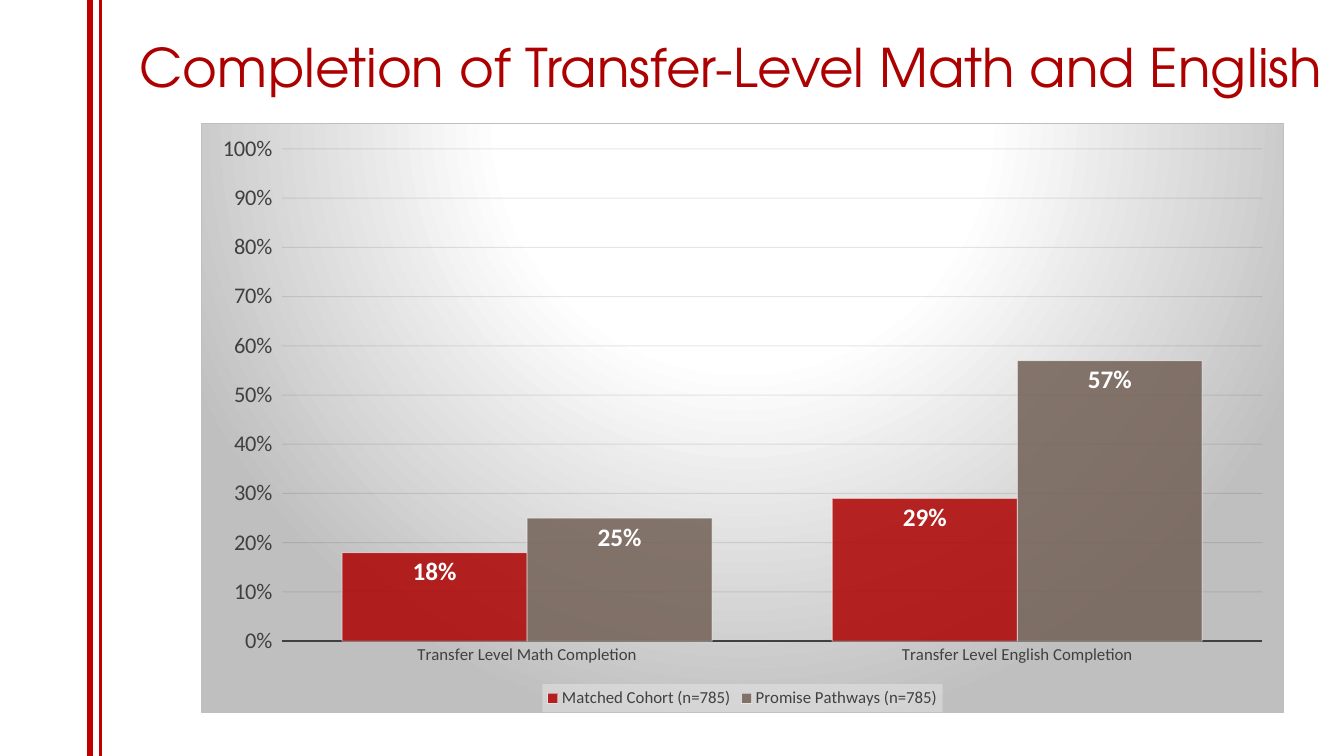
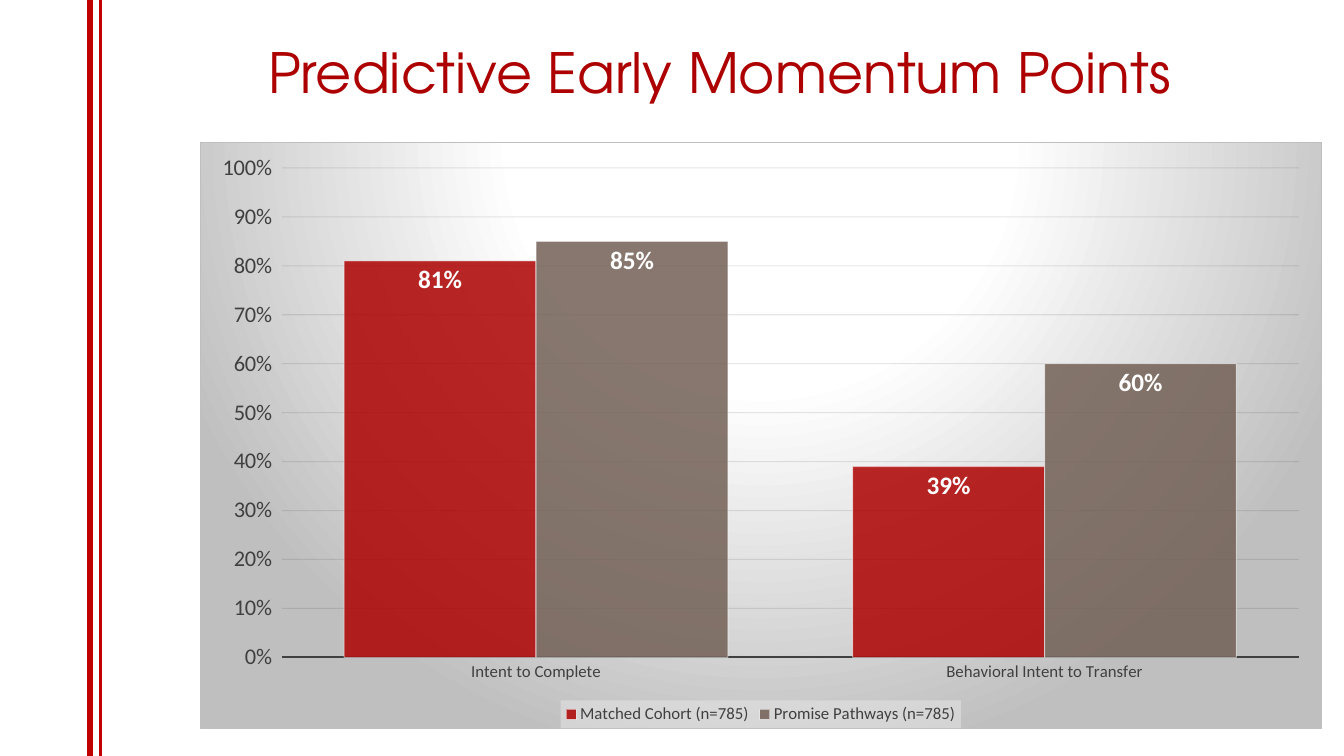
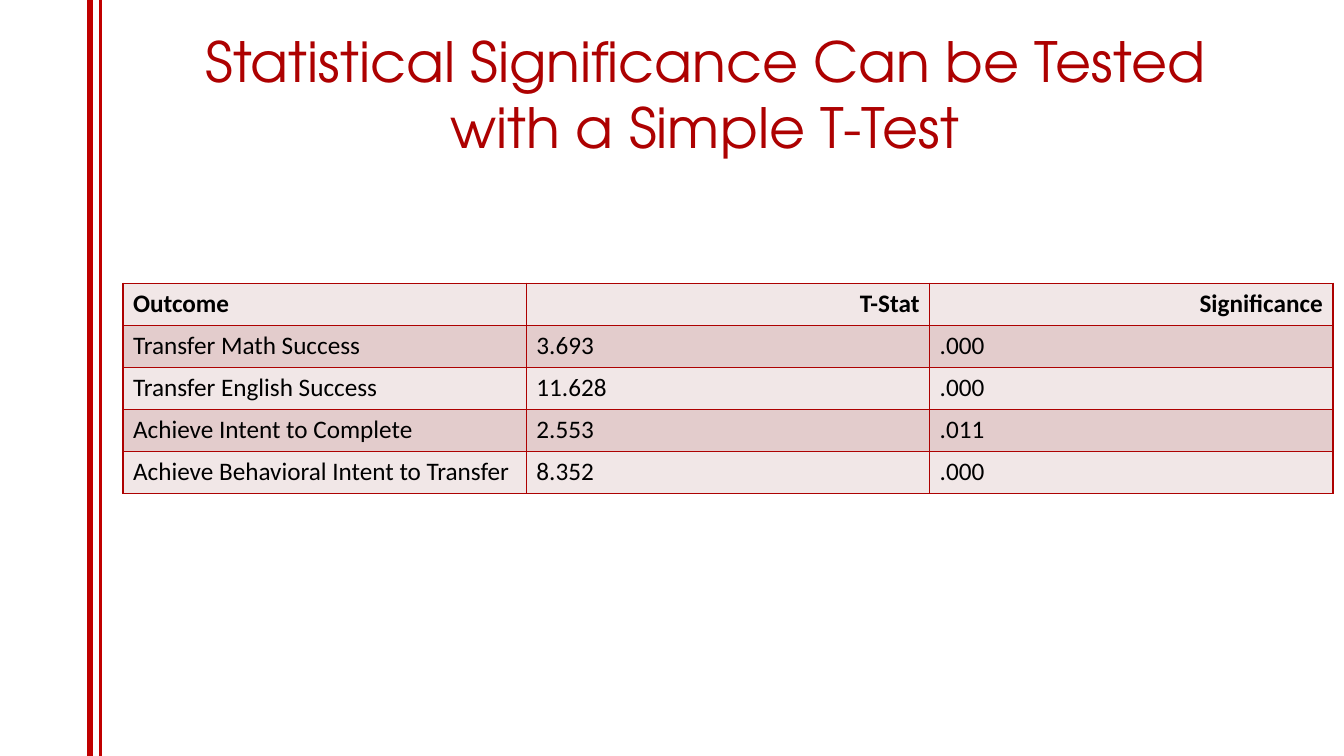
from dataclasses import dataclass

from lxml.etree import SubElement
from pptx import Presentation
from pptx.chart.data import CategoryChartData
from pptx.dml.color import RGBColor
from pptx.enum.chart import XL_CHART_TYPE, XL_LABEL_POSITION, XL_LEGEND_POSITION, XL_TICK_MARK
from pptx.enum.shapes import MSO_CONNECTOR
from pptx.enum.text import MSO_ANCHOR, PP_ALIGN
from pptx.oxml import parse_xml
from pptx.oxml.ns import nsdecls, qn
from pptx.util import Inches, Pt

STRIPE_RED = RGBColor(0xC0, 0x00, 0x00)
ACCENT_RED = RGBColor(0xAD, 0x01, 0x01)
TAUPE = RGBColor(0x72, 0x60, 0x56)
WHITE = RGBColor(0xFF, 0xFF, 0xFF)
BLACK = RGBColor(0x00, 0x00, 0x00)
NEAR_BLACK = RGBColor(0x0D, 0x0D, 0x0D)
DARK_GRAY = RGBColor(0x40, 0x40, 0x40)
SILVER = RGBColor(0xBF, 0xBF, 0xBF)
LEGEND_GRAY = RGBColor(0xF2, 0xF2, 0xF2)
LIGHT_ROW = RGBColor(0xF1, 0xE7, 0xE7)
DARK_ROW = RGBColor(0xE3, 0xCC, 0xCC)

TITLE_FONT = "TeX Gyre Adventor"
BODY_FONT = "Calibri"
COHORTS = ("Matched Cohort (n=785)", "Promise Pathways (n=785)")
COHORT_COLORS = (ACCENT_RED, TAUPE)


@dataclass(frozen=True)
class Area:
    left: float
    top: float
    width: float
    height: float

    def lengths(self) -> tuple:
        return tuple(Inches(n) for n in (self.left, self.top, self.width, self.height))


@dataclass(frozen=True)
class Title:
    text: str
    area: Area
    size: float = 39.6


@dataclass(frozen=True)
class Stripe:
    x: float
    weight: float


@dataclass(frozen=True)
class CohortChart:
    title: Title
    area: Area
    categories: tuple
    matched: tuple
    promise: tuple


STRIPES = (Stripe(1, 2.25), Stripe(0.89, 4.5))

CHARTS = (
    CohortChart(
        Title("Completion of Transfer-Level Math and English", Area(0.87, 0.22, 12.76, 0.87), 38),
        Area(1.99, 1.22, 10.75, 5.85),
        ("Transfer Level Math Completion", "Transfer Level English Completion"),
        (0.18, 0.29),
        (0.25, 0.57),
    ),
    CohortChart(
        Title("Predictive Early Momentum Points", Area(1.51, 0.37, 11.25, 0.68)),
        Area(1.98, 1.41, 11.13, 5.82),
        ("Intent to Complete", "Behavioral Intent to Transfer"),
        (0.81, 0.39),
        (0.85, 0.6),
    ),
)

TEST_TITLE = Title(
    "Statistical Significance Can be Tested with a Simple T-Test", Area(1.33, 0.3, 11.33, 1.25)
)
TEST_AREA = Area(1.22, 2.81, 12, 2.09)
TEST_ROWS = (
    ("Outcome", "T-Stat", "Significance"),
    ("Transfer Math Success", "3.693", ".000"),
    ("Transfer English Success", "11.628", ".000"),
    ("Achieve Intent to Complete", "2.553", ".011"),
    ("Achieve Behavioral Intent to Transfer", "8.352", ".000"),
)


def style_font(font, name: str, size: float, color: RGBColor, bold: bool = False) -> None:
    font.name = name
    font.size = Pt(size)
    font.bold = bold
    font.color.rgb = color


def style_line(line, color: RGBColor, weight: float) -> None:
    line.color.rgb = color
    line.width = Pt(weight)


def set_opacity(colors: list, percent: int) -> None:
    for color in colors:
        SubElement(color, qn("a:alpha")).set("val", str(percent * 1000))


def add_titled_page(deck, title: Title):
    """Add a blank page with the red stripes and its title."""
    page = deck.slides.add_slide(deck.slide_layouts[6])
    for stripe in STRIPES:
        x = Inches(stripe.x)
        line = page.shapes.add_connector(MSO_CONNECTOR.STRAIGHT, x, deck.slide_height, x, 0)
        style_line(line.line, STRIPE_RED, stripe.weight)
        SubElement(line.element.spPr, qn("a:effectLst"))
    frame = page.shapes.add_textbox(*title.area.lengths()).text_frame
    frame.word_wrap = True
    frame.vertical_anchor = MSO_ANCHOR.MIDDLE
    frame.text = title.text
    para = frame.paragraphs[0]
    para.alignment = PP_ALIGN.CENTER
    style_font(para.runs[0].font, TITLE_FONT, title.size, ACCENT_RED)
    return page


def style_axes(chart) -> None:
    categories = chart.category_axis
    categories.major_tick_mark = XL_TICK_MARK.NONE
    style_font(categories.tick_labels.font, BODY_FONT, 12, DARK_GRAY)
    style_line(categories.format.line, DARK_GRAY, 1.5)

    values = chart.value_axis
    values.minimum_scale = 0
    values.maximum_scale = 1
    values.major_unit = 0.1
    values.major_tick_mark = XL_TICK_MARK.OUTSIDE
    values.format.line.fill.background()
    style_font(values.tick_labels.font, BODY_FONT, 16, DARK_GRAY)
    values.tick_labels.number_format = "0%"
    values.tick_labels.number_format_is_linked = False
    style_line(values.major_gridlines.format.line, NEAR_BLACK, 0.75)
    set_opacity(chart.element.xpath(".//c:majorGridlines//a:srgbClr"), 10)


def style_columns(chart) -> None:
    plot = chart.plots[0]
    plot.gap_width = 65
    plot.overlap = 0
    plot.vary_by_categories = False
    for series, color in zip(plot.series, COHORT_COLORS):
        series.format.fill.solid()
        series.format.fill.fore_color.rgb = color
        style_line(series.format.line, WHITE, 0.75)
        labels = series.data_labels
        labels.show_value = True
        labels.position = XL_LABEL_POSITION.INSIDE_END
        labels.number_format = "0%"
        labels.number_format_is_linked = False
        style_font(labels.font, BODY_FONT, 18, WHITE, bold=True)
    set_opacity(chart.element.xpath(".//c:ser/c:spPr/a:solidFill/a:srgbClr"), 85)
    set_opacity(chart.element.xpath(".//c:ser/c:spPr/a:ln//a:srgbClr"), 50)


def style_legend(chart) -> None:
    chart.has_legend = True
    chart.legend.position = XL_LEGEND_POSITION.BOTTOM
    chart.legend.include_in_layout = False
    style_font(chart.legend.font, BODY_FONT, 12, DARK_GRAY)
    panel = parse_xml(
        f'<c:spPr {nsdecls("c", "a")}><a:solidFill><a:srgbClr val="{LEGEND_GRAY}">'
        '<a:alpha val="39000"/></a:srgbClr></a:solidFill></c:spPr>'
    )
    chart.element.xpath(".//c:legend/c:txPr")[0].addprevious(panel)


def add_spotlight(chart) -> None:
    """Fill the chart area with a white glow that fades to silver."""
    stops = "".join(
        f'<a:gs pos="{percent * 1000}"><a:srgbClr val="{color}"/></a:gs>'
        for percent, color in ((0, WHITE), (39, WHITE), (100, SILVER))
    )
    background = parse_xml(
        f'<c:spPr {nsdecls("c", "a")}><a:gradFill><a:gsLst>{stops}</a:gsLst>'
        '<a:path path="circle"><a:fillToRect l="50000" t="-80000" r="50000" b="180000"/></a:path>'
        f'</a:gradFill><a:ln w="{Pt(0.75)}"><a:solidFill><a:srgbClr val="{SILVER}"/>'
        "</a:solidFill></a:ln></c:spPr>"
    )
    chart.element.xpath("./c:chart")[0].addnext(background)


def add_cohort_chart(page, content: CohortChart) -> None:
    data = CategoryChartData(number_format="0%")
    data.categories = content.categories
    for name, values in zip(COHORTS, (content.matched, content.promise)):
        data.add_series(name, values)
    chart = page.shapes.add_chart(
        XL_CHART_TYPE.COLUMN_CLUSTERED, *content.area.lengths(), data
    ).chart
    chart.has_title = False
    style_font(chart.font, BODY_FONT, 10, BLACK)
    style_axes(chart)
    style_columns(chart)
    style_legend(chart)
    add_spotlight(chart)


def add_cell_borders(frame, color: RGBColor, weight: float) -> None:
    for properties in frame.element.xpath(".//a:tcPr"):
        for position, side in enumerate(("lnL", "lnR", "lnT", "lnB")):
            border = parse_xml(
                f'<a:{side} {nsdecls("a")} w="{Pt(weight)}"><a:solidFill>'
                f'<a:srgbClr val="{color}"/></a:solidFill></a:{side}>'
            )
            properties.insert(position, border)


def add_test_table(page) -> None:
    frame = page.shapes.add_table(len(TEST_ROWS), len(TEST_ROWS[0]), *TEST_AREA.lengths())
    table = frame.table
    table.first_row = False
    table.horz_banding = False
    for row, texts in enumerate(TEST_ROWS):
        is_header = row == 0
        for column, text in enumerate(texts):
            cell = table.cell(row, column)
            cell.fill.solid()
            cell.fill.fore_color.rgb = DARK_ROW if row % 2 else LIGHT_ROW
            cell.text_frame.text = text
            para = cell.text_frame.paragraphs[0]
            if is_header and column > 0:
                para.alignment = PP_ALIGN.RIGHT
            style_font(para.runs[0].font, BODY_FONT, 18, BLACK, bold=is_header)
    add_cell_borders(frame, ACCENT_RED, 1)


def main() -> None:
    deck = Presentation()
    deck.slide_width = Inches(13.33)
    deck.slide_height = Inches(7.5)
    for content in CHARTS:
        add_cohort_chart(add_titled_page(deck, content.title), content)
    add_test_table(add_titled_page(deck, TEST_TITLE))
    deck.save("out.pptx")


if __name__ == "__main__":
    main()
